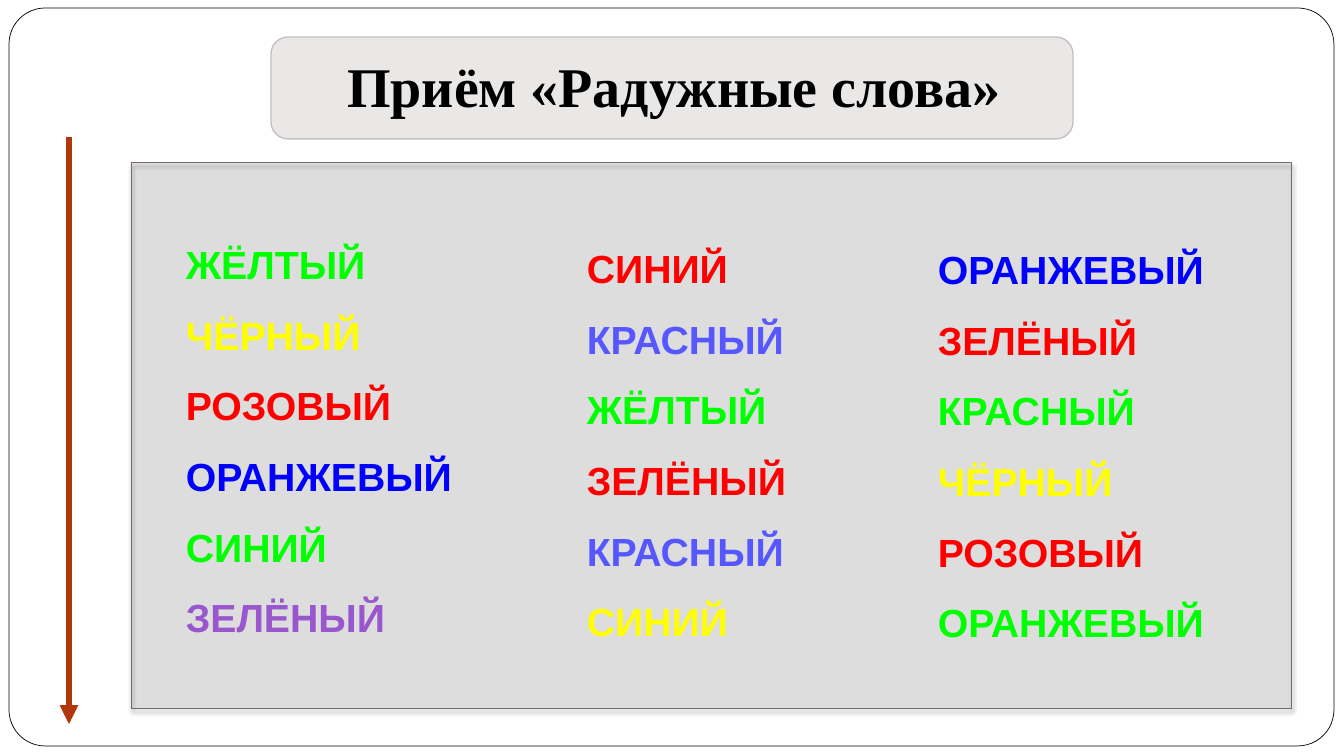
from lxml import etree
from pptx import Presentation
from pptx.dml.color import RGBColor
from pptx.enum.shapes import MSO_CONNECTOR, MSO_SHAPE
from pptx.enum.text import MSO_ANCHOR, MSO_AUTO_SIZE, PP_ALIGN
from pptx.oxml.ns import qn
from pptx.util import Emu, Pt

RECTANGLE = MSO_SHAPE.RECTANGLE
ROUNDED = MSO_SHAPE.ROUNDED_RECTANGLE
STRAIGHT = MSO_CONNECTOR.STRAIGHT
MIDDLE = MSO_ANCHOR.MIDDLE
CENTER = PP_ALIGN.CENTER
FIT_SHAPE = MSO_AUTO_SIZE.SHAPE_TO_FIT_TEXT
NO_FIT = MSO_AUTO_SIZE.NONE

EMU_PER_PX = 914400 / 100.8
TITLE_ONLY = 5

GREEN = "00FF00"
YELLOW = "FFFF00"
RED = "FF0000"
BLUE = "0000FF"
LILAC = "5757FF"
PURPLE = "9A57CD"

TITLE_FONT = {"name": "Times New Roman", "size": Pt(40), "bold": True}
WORD_FONT = {"name": "Arial", "size": Pt(28), "bold": True}

WORD_COLUMNS = [
    ((44, 49, 289, 437), [
        ("ЖЁЛТЫЙ", GREEN), ("ЧЁРНЫЙ", YELLOW), ("РОЗОВЫЙ", RED),
        ("ОРАНЖЕВЫЙ", BLUE), ("СИНИЙ", GREEN), ("ЗЕЛЁНЫЙ", PURPLE),
    ]),
    ((445, 53, 222, 437), [
        ("СИНИЙ", RED), ("КРАСНЫЙ", LILAC), ("ЖЁЛТЫЙ", GREEN),
        ("ЗЕЛЁНЫЙ", RED), ("КРАСНЫЙ", LILAC), ("СИНИЙ", YELLOW),
    ]),
    ((796, 54, 289, 437), [
        ("ОРАНЖЕВЫЙ", BLUE), ("ЗЕЛЁНЫЙ", RED), ("КРАСНЫЙ", GREEN),
        ("ЧЁРНЫЙ", YELLOW), ("РОЗОВЫЙ", RED), ("ОРАНЖЕВЫЙ", GREEN),
    ]),
]


def px(length):
    return Emu(round(length * EMU_PER_PX))


def color(hex_string):
    return RGBColor.from_string(hex_string)


def apply_format(target, values):
    for name, value in values.items():
        setattr(target, name, value)


def place(shape, box):
    apply_format(shape, dict(zip(("left", "top", "width", "height"), map(px, box))))


def add_child(parent, tag, **attributes):
    return etree.SubElement(parent, qn(tag), attributes)


def add_panel(slide, kind, box, fill, line, width, opacity=100):
    panel = slide.shapes.add_shape(kind, *map(px, box))
    panel.shadow.inherit = False
    panel.fill.solid()
    panel.fill.fore_color.rgb = color(fill)
    panel.line.color.rgb = color(line)
    panel.line.width = Pt(width)
    if opacity < 100:
        fill_color = panel.fill._xPr.find(qn("a:solidFill"))[0]
        add_child(fill_color, "a:alpha", val=str(opacity * 1000))
    return panel


def add_frame(slide, box):
    frame = add_panel(slide, ROUNDED, box, "FFFFFF", "000000", 0.5)
    frame.adjustments[0] = 0.049


def add_title(slide, box):
    left, top, width, height = box
    add_panel(slide, ROUNDED, box, "D3CECE", "C3C1C1", 1, opacity=47)
    title = slide.shapes.title
    slide.shapes._spTree.append(title._element)
    place(title, (left + 24, top - 3, width - 44, height))
    text_frame = title.text_frame
    text_frame.text = "Приём «Радужные слова»"
    apply_format(text_frame, {"vertical_anchor": MIDDLE, "auto_size": NO_FIT})
    paragraph = text_frame.paragraphs[0]
    paragraph.alignment = CENTER
    font = paragraph.runs[0].font
    apply_format(font, TITLE_FONT)
    font.color.rgb = color("000000")


def add_word_column(slide, box, words):
    text_box = slide.shapes.add_textbox(*map(px, box))
    text_frame = text_box.text_frame
    apply_format(text_frame, {"word_wrap": False, "auto_size": FIT_SHAPE})
    text_frame.text = "\n".join(word for word, _ in words)
    for paragraph, (_, word_color) in zip(text_frame.paragraphs, words):
        paragraph.line_spacing = 1.5
        font = paragraph.runs[0].font
        apply_format(font, WORD_FONT)
        font.color.rgb = color(word_color)


def add_word_panel(slide, box):
    left, top, _, _ = box
    panel = add_panel(slide, RECTANGLE, box, "000000", "75696A", 0.75, opacity=9)
    effects = panel._element.spPr.find(qn("a:effectLst"))
    shadow = add_child(effects, "a:outerShdw", blurRad=str(Pt(3)), dist=str(Pt(2)),
                       dir="5400000", rotWithShape="0")
    shadow_color = add_child(shadow, "a:srgbClr", val="000000")
    add_child(shadow_color, "a:alpha", val="50000")
    for (offset_x, offset_y, width, height), words in WORD_COLUMNS:
        add_word_column(slide, (left + offset_x, top + offset_y, width, height), words)


def add_down_arrow(slide, box):
    left, top, width, height = box
    middle = left + width // 2
    arrow = slide.shapes.add_connector(
        STRAIGHT, px(middle), px(top), px(middle), px(top + height))
    arrow.line.color.rgb = color("B1360B")
    arrow.line.width = Pt(4.5)
    add_child(arrow.line._get_or_add_ln(), "a:tailEnd", type="triangle")
    add_child(arrow._element.spPr, "a:effectLst")


def main():
    presentation = Presentation()
    presentation.slide_width = px(1344)
    presentation.slide_height = px(756)
    slide = presentation.slides.add_slide(presentation.slide_layouts[TITLE_ONLY])
    add_frame(slide, (9, 8, 1325, 738))
    add_title(slide, (271, 37, 802, 102))
    add_word_panel(slide, (132, 163, 1160, 546))
    add_down_arrow(slide, (59, 137, 20, 587))
    presentation.save("out.pptx")


if __name__ == "__main__":
    main()
